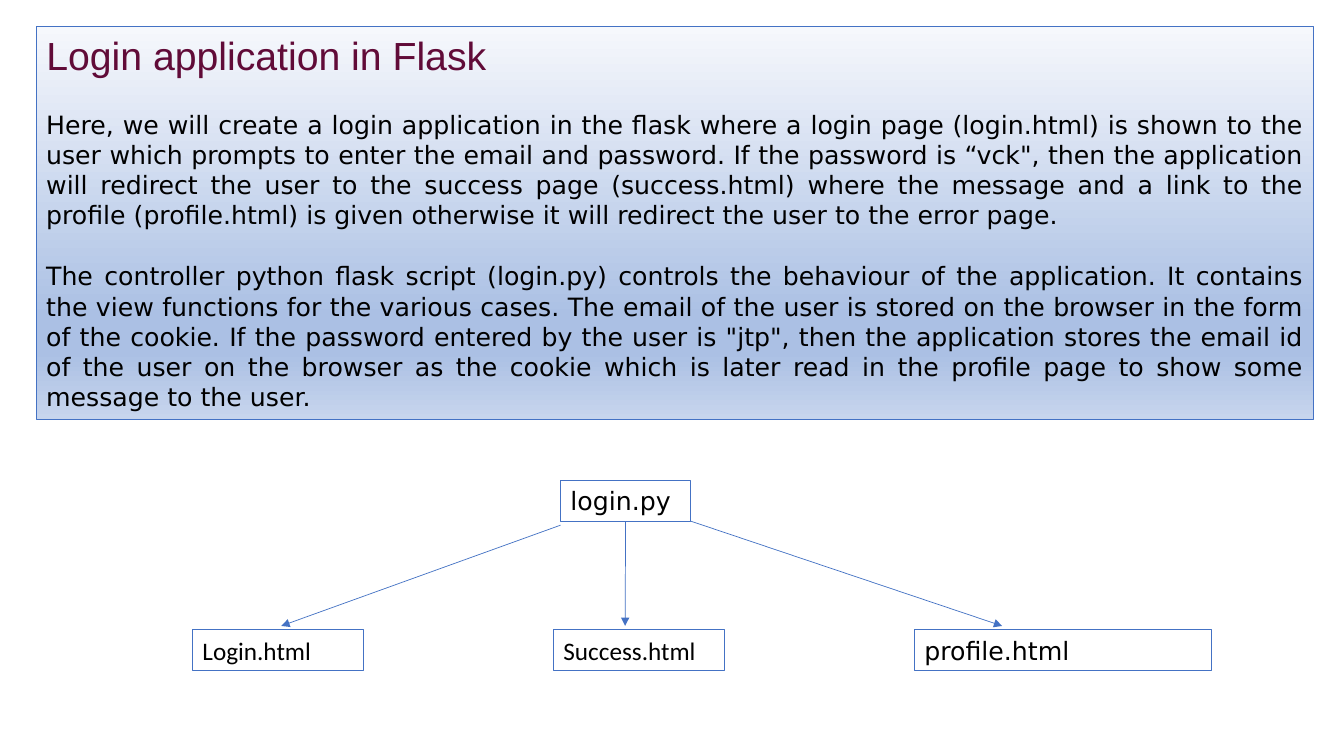
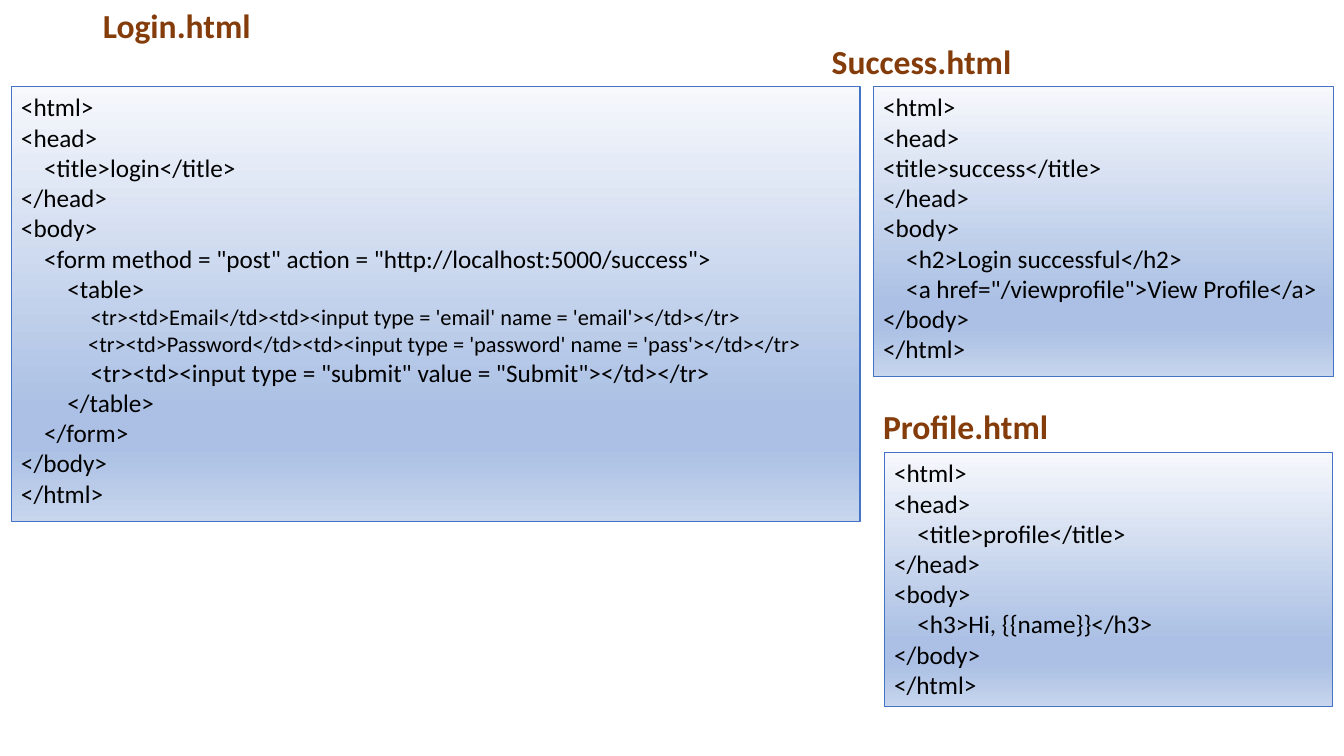
from lxml import etree
from pptx import Presentation
from pptx.dml.color import RGBColor
from pptx.enum.shapes import MSO_CONNECTOR, MSO_SHAPE
from pptx.enum.text import MSO_ANCHOR, MSO_AUTO_SIZE, PP_ALIGN
from pptx.oxml.ns import qn
from pptx.util import Pt

RECT = MSO_SHAPE.RECTANGLE
STRAIGHT = MSO_CONNECTOR.STRAIGHT
TOP = MSO_ANCHOR.TOP
FIXED = MSO_AUTO_SIZE.NONE
LEFT, JUSTIFY = PP_ALIGN.LEFT, PP_ALIGN.JUSTIFY

PX = 9144  # 100 px to the inch
WIDE, HIGH = 1333, 750
TAB = 23
TITLE_ONLY = 5

BLACK = RGBColor(0x00, 0x00, 0x00)
BLUE = RGBColor(0x44, 0x72, 0xC4)
PLUM = RGBColor(0x61, 0x0B, 0x38)
BROWN = RGBColor(0x84, 0x3C, 0x0B)
PALE = RGBColor(0xF6, 0xF8, 0xFC)
MID = RGBColor(0xAB, 0xC0, 0xE4)
SOFT = RGBColor(0xC7, 0xD5, 0xED)
STOPS = [(0, PALE), (74, MID), (83, MID), (100, SOFT)]

SANS, DEJAVU, CALIBRI = "Arial", "DejaVu Sans", "Calibri"

HEADING = "Login application in Flask"
HEAD_BOX = (36, 26, 1267, 60)
INTRO_BOX = (36, 26, 1267, 390)
INTRO_TOP = 82
INTRO = [
    "Here, we will create a login application in the flask where a login page "
    "(login.html) is shown to the user which prompts to enter the email and "
    "password. If the password is “vck\", then the application will redirect "
    "the user to the success page (success.html) where the message and a link "
    "to the profile (profile.html) is given otherwise it will redirect the "
    "user to the error page.",
    "The controller python flask script (login.py) controls the behaviour of "
    "the application. It contains the view functions for the various cases. "
    "The email of the user is stored on the browser in the form of the cookie. "
    "If the password entered by the user is \"jtp\", then the application "
    "stores the email id of the user on the browser as the cookie which is "
    "later read in the profile page to show some message to the user.",
]

# text, left, top, width, font
ROOT = ("login.py", 556, 477, 129, DEJAVU)
PAGES = [
    ("Login.html", 191, 625, 170, CALIBRI),
    ("Success.html", 549, 625, 170, CALIBRI),
    ("profile.html", 907, 625, 295, DEJAVU),
]
NODE_HIGH = 40
SIDE_ARROWS = [(556, 521, 279, 621), (685, 517, 994, 621)]
MID_ARROW = (620, 517, 620, 621)

# caption, caption box, panel box, code lines as (depth, text[, size])
FILES = [
    ("Login.html", (92, 0, 191, 50), (11, 86, 842, 431), [
        (0, "<html>"),
        (0, "<head>"),
        (1, "<title>login</title>"),
        (0, "</head>"),
        (0, "<body>"),
        (1, "<form method = \"post\" action = \"http://localhost:5000/success\">"),
        (2, "<table>"),
        (3, "<tr><td>Email</td><td><input type = 'email' name = 'email'></td></tr>", 16),
        (2.9, "<tr><td>Password</td><td><input type = 'password' name = 'pass'></td></tr>", 16),
        (3, "<tr><td><input type = \"submit\" value = \"Submit\"></td></tr>"),
        (2, "</table>"),
        (1, "</form>"),
        (0, "</body>"),
        (0, "</html>"),
    ]),
    ("Success.html", (815, 36, 235, 50), (866, 86, 457, 288), [
        (0, "<html>"),
        (0, "<head>"),
        (0, "<title>success</title>"),
        (0, "</head>"),
        (0, "<body>"),
        (1, "<h2>Login successful</h2>"),
        (1, "<a href=\"/viewprofile\">View Profile</a>"),
        (0, "</body>"),
        (0, "</html>"),
    ]),
    ("Profile.html", (866, 398, 247, 50), (877, 449, 445, 252), [
        (0, "<html>"),
        (0, "<head>"),
        (1, "<title>profile</title>"),
        (0, "</head>"),
        (0, "<body>"),
        (1, "<h3>Hi, {{name}}</h3>"),
        (0, "</body>"),
        (0, "</html>"),
    ]),
]


def emu(box):
    return [n * PX for n in box]


def write(shape, lines, font, color=BLACK, size=18, bold=False, align=LEFT, gap=0):
    """Fill a shape with (depth, text[, size]) lines."""
    frame = shape.text_frame
    frame.word_wrap = True
    frame.auto_size = FIXED
    frame.vertical_anchor = TOP
    for i, (depth, text, *own) in enumerate(lines):
        para = frame.add_paragraph() if i else frame.paragraphs[0]
        para.text = text
        para.alignment = align
        if i and gap:
            para.space_before = Pt(gap)
        if depth:
            props = para._p.get_or_add_pPr()
            props.set("marL", str(round(depth * TAB * PX)))
            props.set("indent", "0")
        face = para.font
        face.name, face.bold = font, bold
        face.size = Pt(own[0] if own else size)
        face.color.rgb = color


def add_rect(slide, box):
    rect = slide.shapes.add_shape(RECT, *emu(box))
    rect.shadow.inherit = False
    rect.fill.background()
    rect.line.color.rgb = BLUE
    rect.line.width = Pt(0.75)
    return rect


def add_panel(slide, box):
    """Add a rectangle with the shared gradient."""
    panel = add_rect(slide, box)
    panel.fill.gradient()
    panel.fill.gradient_angle = 270
    stops = panel.element.find(".//" + qn("a:gsLst"))
    stops.clear()
    for pos, color in STOPS:
        stop = etree.SubElement(stops, qn("a:gs"), pos=str(pos * 1000))
        etree.SubElement(stop, qn("a:srgbClr"), val=str(color))
    return panel


def add_node(slide, text, left, top, width, font):
    node = add_rect(slide, (left, top, width, NODE_HIGH))
    write(node, [(0, text)], font)
    return node


def add_arrow(slide, ends):
    arrow = slide.shapes.add_connector(STRAIGHT, *emu(ends))
    arrow.line.color.rgb = BLUE
    arrow.line.width = Pt(0.5)
    props = arrow.element.spPr
    etree.SubElement(props.find(qn("a:ln")), qn("a:tailEnd"), type="triangle")
    etree.SubElement(props, qn("a:effectLst"))
    return arrow


def set_title(slide, box, text, font, color, size, bold=False):
    title = slide.shapes.title
    title.left, title.top, title.width, title.height = emu(box)
    write(title, [(0, text)], font, color, size, bold)
    return title


def build_flow(slide):
    panel = add_panel(slide, INTRO_BOX)
    write(panel, [(0, text) for text in INTRO], DEJAVU, align=JUSTIFY, gap=22)
    panel.text_frame.margin_top = INTRO_TOP * PX
    title = set_title(slide, HEAD_BOX, HEADING, SANS, PLUM, 28)
    panel.element.addnext(title.element)  # keep the title above the panel
    root = add_node(slide, *ROOT)
    for page in PAGES:
        add_node(slide, *page)
    for ends in SIDE_ARROWS:
        add_arrow(slide, ends)
    add_arrow(slide, MID_ARROW).begin_connect(root, 2)


def build_code(slide):
    for i, (name, head, box, lines) in enumerate(FILES):
        write(add_panel(slide, box), lines, CALIBRI)
        if i:
            label = slide.shapes.add_textbox(*emu(head))
            write(label, [(0, name)], CALIBRI, BROWN, 24, True)
        else:
            set_title(slide, head, name, CALIBRI, BROWN, 24, True)


def main():
    deck = Presentation()
    deck.slide_width, deck.slide_height = emu((WIDE, HIGH))
    for build in (build_flow, build_code):
        build(deck.slides.add_slide(deck.slide_layouts[TITLE_ONLY]))
    deck.save("out.pptx")


if __name__ == "__main__":
    main()
